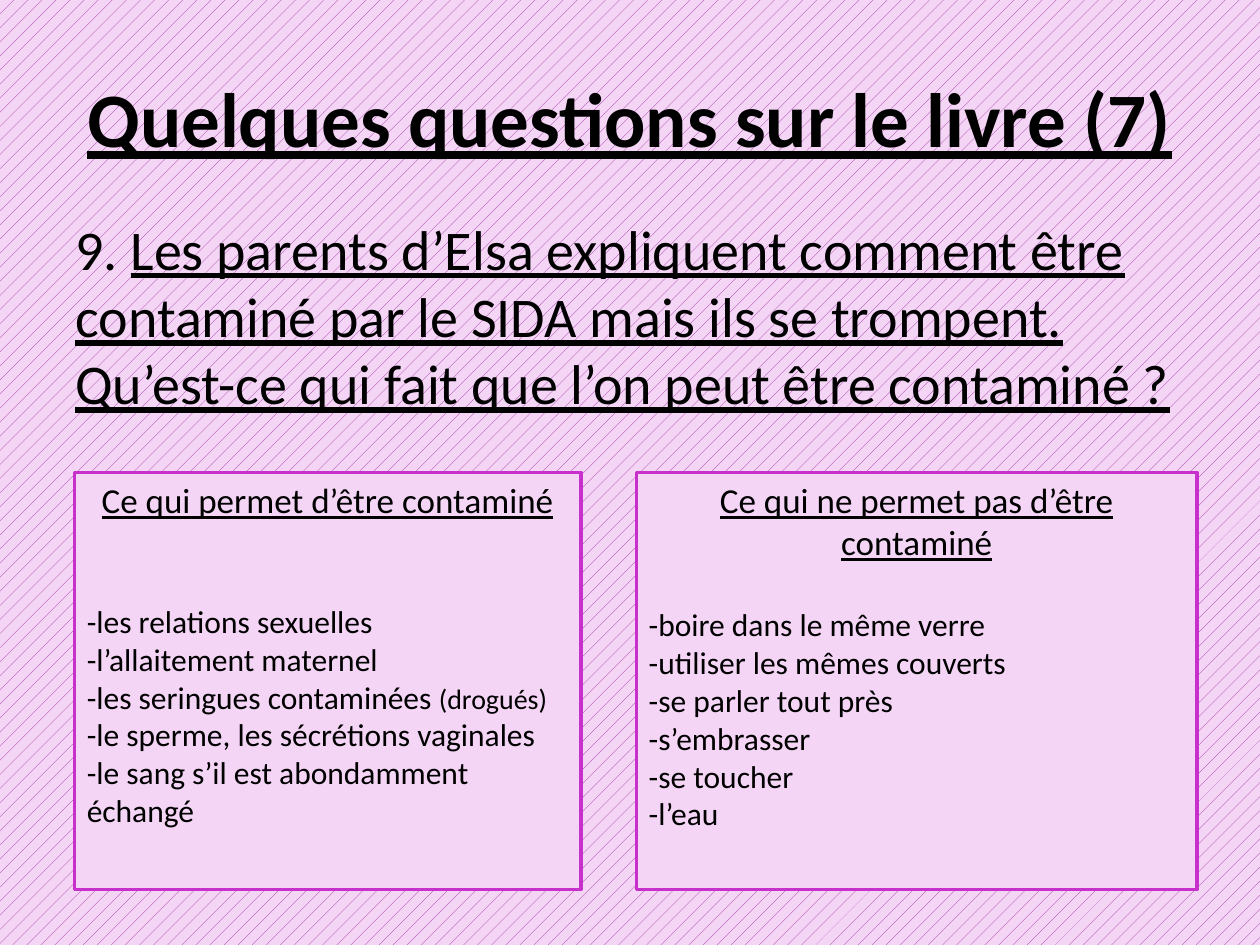
from dataclasses import dataclass

import pptx
import pptx.dml.color
import pptx.enum.dml
import pptx.enum.shapes
import pptx.enum.text
import pptx.util

Pt = pptx.util.Pt
ALIGN = pptx.enum.text.PP_ALIGN
ANCHOR = pptx.enum.text.MSO_ANCHOR
FONT = "Calibri"
BLACK = "000000"
PALE_PINK = "F4D5F5"
MAGENTA = "C830CC"
PURPLE = "962499"
PANEL_TOP = 270
PANEL_HEIGHT = 238.3


@dataclass(frozen=True)
class Span:
    text: str
    size: float
    underline: bool = False
    bold: bool = False


@dataclass(frozen=True)
class Panel:
    left: float
    width: float
    heading: str
    gap: float
    items: tuple[tuple[Span, ...], ...]


def color(value: str) -> pptx.dml.color.RGBColor:
    return pptx.dml.color.RGBColor.from_string(value)


def item(text: str, detail: str = "") -> tuple[Span, ...]:
    return (Span(text, 18),) + ((Span(detail, 16),) if detail else ())


def write(paragraph, spans: tuple[Span, ...], alignment=ALIGN.LEFT) -> None:
    paragraph.alignment = alignment
    for span in spans:
        run = paragraph.add_run()
        run.text = span.text
        run.font.name = FONT
        run.font.size = Pt(span.size)
        run.font.bold = span.bold
        run.font.underline = span.underline
        run.font.color.rgb = color(BLACK)


def draw_background(slide) -> None:
    fill = slide.background.fill
    fill.patterned()
    fill.pattern = pptx.enum.dml.MSO_PATTERN.PERCENT_10
    fill.fore_color.rgb = color(PURPLE)
    fill.back_color.rgb = color(PALE_PINK)


def draw_title(slide, text: str) -> None:
    title = slide.shapes.title
    title.left, title.top = Pt(36), Pt(21.6)
    title.width, title.height = Pt(648), Pt(90)
    title.text_frame.vertical_anchor = ANCHOR.MIDDLE
    spans = (Span(text, 44, underline=True, bold=True),)
    write(title.text_frame.paragraphs[0], spans, ALIGN.CENTER)


def draw_question(slide, number: str, text: str) -> None:
    box = slide.shapes.add_textbox(Pt(36), Pt(118.8), Pt(648), Pt(144))
    box.text_frame.word_wrap = True
    spans = (Span(number, 32), Span(text, 32, underline=True))
    write(box.text_frame.paragraphs[0], spans)


def draw_panel(slide, panel: Panel) -> None:
    shape = slide.shapes.add_shape(
        pptx.enum.shapes.MSO_SHAPE.RECTANGLE,
        Pt(panel.left), Pt(PANEL_TOP), Pt(panel.width), Pt(PANEL_HEIGHT),
    )
    shape.shadow.inherit = False
    shape.fill.solid()
    shape.fill.fore_color.rgb = color(PALE_PINK)
    shape.line.color.rgb = color(MAGENTA)
    shape.line.width = Pt(2)
    text_frame = shape.text_frame
    text_frame.word_wrap = True
    text_frame.vertical_anchor = ANCHOR.TOP
    heading = text_frame.paragraphs[0]
    write(heading, (Span(panel.heading, 20, underline=True),), ALIGN.CENTER)
    heading.space_after = Pt(panel.gap)
    for spans in panel.items:
        write(text_frame.add_paragraph(), spans)


PANELS = (
    Panel(42.5, 289.4, "Ce qui permet d’être contaminé", 46.4, (
        item("-les relations sexuelles"),
        item("-l’allaitement maternel"),
        item("-les seringues contaminées ", "(drogués)"),
        item("-le sperme, les sécrétions vaginales"),
        item("-le sang s’il est abondamment échangé"),
    )),
    Panel(363.6, 320.4, "Ce qui ne permet pas d’être contaminé", 24.4, (
        item("-boire dans le même verre"),
        item("-utiliser les mêmes couverts"),
        item("-se parler tout près"),
        item("-s’embrasser"),
        item("-se toucher"),
        item("-l’eau"),
    )),
)


def main() -> None:
    presentation = pptx.Presentation()
    presentation.slide_width, presentation.slide_height = Pt(720), Pt(540)
    slide = presentation.slides.add_slide(presentation.slide_layouts[5])
    draw_background(slide)
    draw_title(slide, "Quelques questions sur le livre (7)")
    draw_question(
        slide,
        "9. ",
        "Les parents d’Elsa expliquent comment être contaminé par le SIDA "
        "mais ils se trompent. Qu’est-ce qui fait que l’on peut être contaminé ?",
    )
    for panel in PANELS:
        draw_panel(slide, panel)
    presentation.save("out.pptx")


if __name__ == "__main__":
    main()
